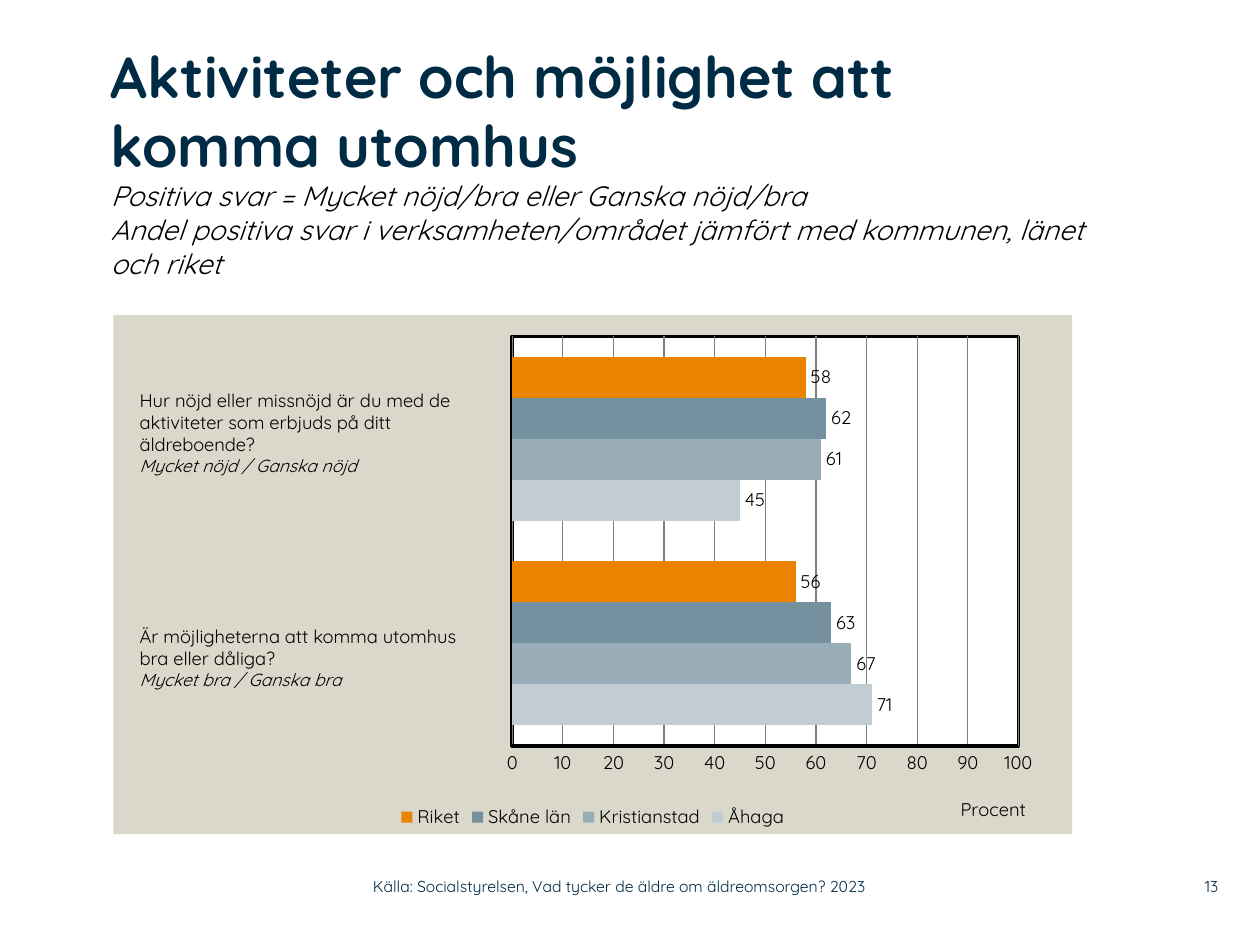
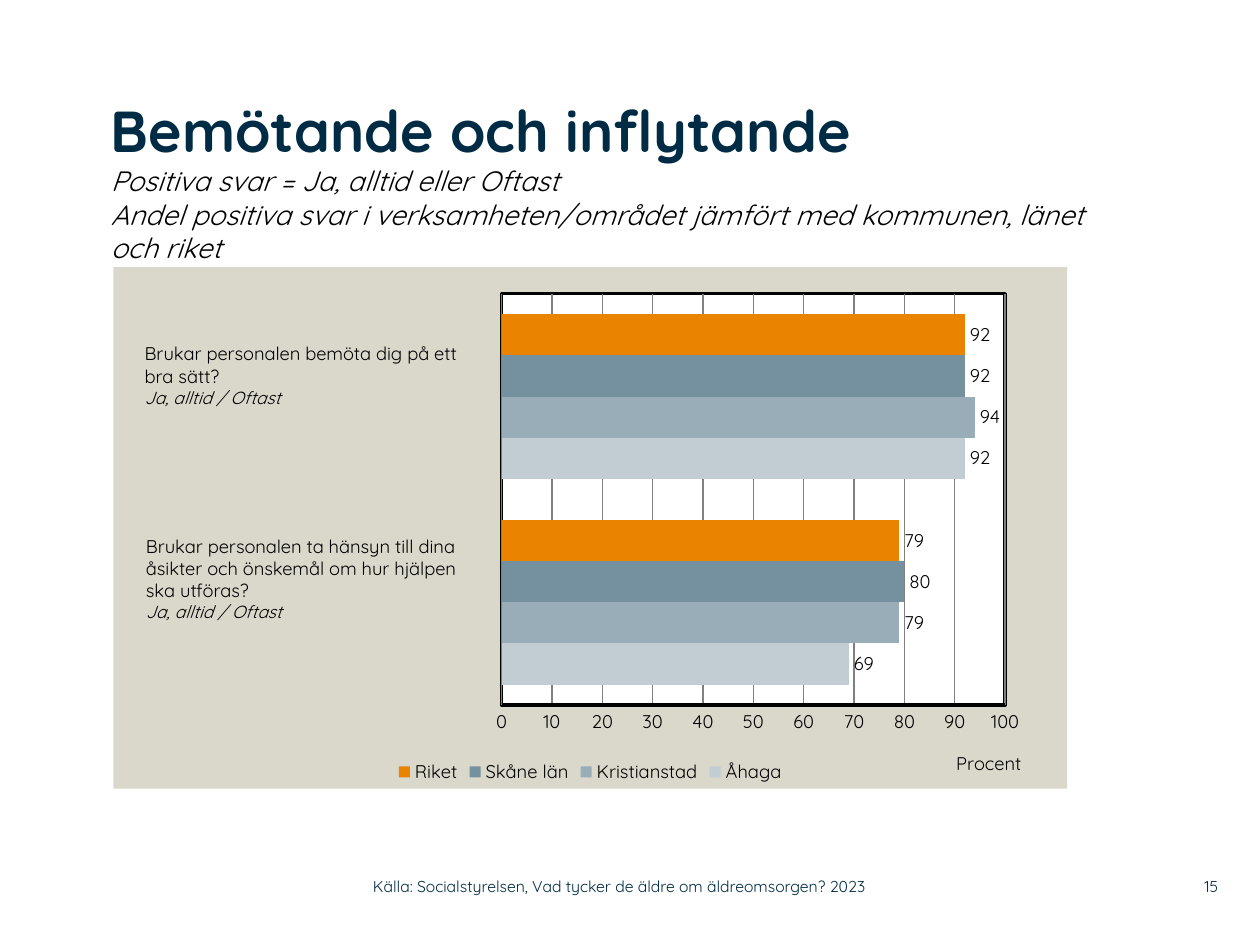
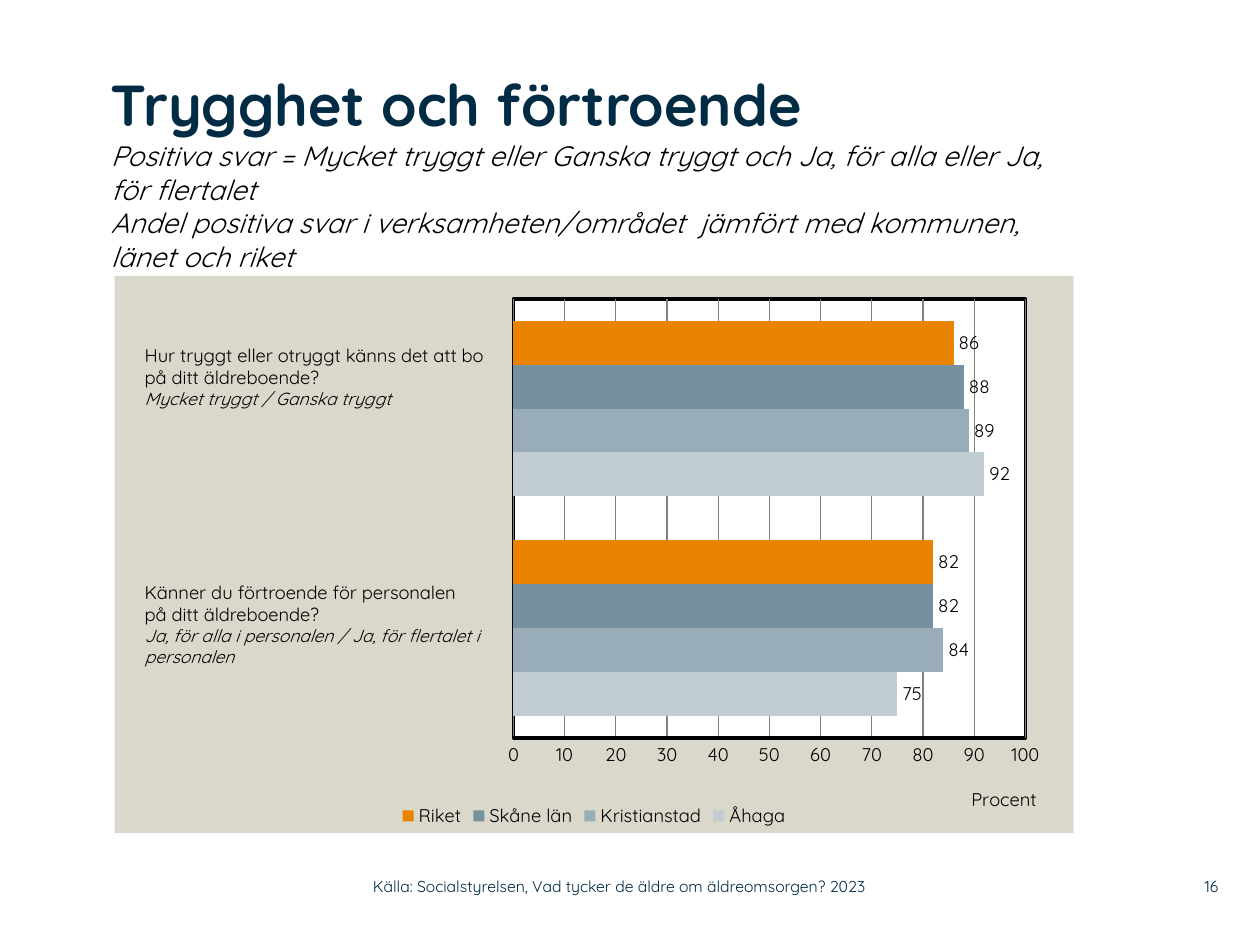
from dataclasses import dataclass

from lxml import etree
from pptx import Presentation
from pptx.chart.data import CategoryChartData as ChartData
from pptx.dml.color import RGBColor as RGB
from pptx.enum.chart import XL_CHART_TYPE as Kind
from pptx.enum.chart import XL_LABEL_POSITION as LabelPos
from pptx.enum.chart import XL_LEGEND_POSITION as LegendPos
from pptx.enum.chart import XL_TICK_MARK as Tick
from pptx.enum.text import MSO_ANCHOR as Anchor
from pptx.enum.text import MSO_AUTO_SIZE as Fit
from pptx.enum.text import PP_ALIGN as Align
from pptx.oxml.ns import qn
from pptx.util import Pt

PX = 9144  # EMU per px, 100 px to the inch
SOURCE = "Källa: Socialstyrelsen, Vad tycker de äldre om äldreomsorgen? 2023"
SHARE = "Andel positiva svar i verksamheten/området jämfört med kommunen, länet och riket"


@dataclass(frozen=True)
class Theme:
    face: str = "Quicksand"
    navy: str = "002B45"
    black: str = "000000"
    white: str = "FFFFFF"
    sand: str = "DAD7CB"
    grid: str = "808080"
    bars: tuple = ("C2CDD3", "99ADB9", "75909F", "E98300")
    names: tuple = ("Åhaga", "Kristianstad", "Skåne län", "Riket")
    head: float = 33
    sub: float = 16
    body: float = 10.5
    hint: float = 10
    foot: float = 9


def panel(fill, line=None, width=2):
    """Make a chart spPr with a solid fill and an optional border."""
    part = etree.Element(qn("c:spPr"))
    edge = etree.Element(qn("a:ln"), w=str(Pt(width)))
    for box, color in ((part, fill), (edge, line)):
        if color:
            solid = etree.SubElement(box, qn("a:solidFill"))
            etree.SubElement(solid, qn("a:srgbClr"), val=color)
        else:
            etree.SubElement(box, qn("a:noFill"))
    part.append(edge)
    return part


def place(node, index, inner=False, **spots):
    """Give a chart part a manual layout, in shares of the chart."""
    for old in node.findall(qn("c:layout")):
        node.remove(old)
    layout = etree.Element(qn("c:layout"))
    manual = etree.SubElement(layout, qn("c:manualLayout"))
    pairs = [("layoutTarget", "inner")] if inner else []
    pairs += [("xMode", "edge"), ("yMode", "edge"), *spots.items()]
    for tag, val in pairs:
        etree.SubElement(manual, qn("c:" + tag), val=str(val))
    node.insert(index, layout)


class Deck:
    def __init__(self, theme):
        self.theme = theme
        self.prs = Presentation()
        self.prs.slide_width, self.prs.slide_height = 1000 * PX, 750 * PX
        self.slide = None

    def page(self, number):
        self.slide = self.prs.slides.add_slide(self.prs.slide_layouts[6])
        look = dict(size=self.theme.foot, color=self.theme.navy)
        flat = dict(pad=0, vertical_anchor=Anchor.MIDDLE)
        self.text((920, 689, 47, 29), [(str(number), look)], Align.RIGHT, **flat)
        self.text((296, 689, 443, 29), [(SOURCE, look)], **flat)

    def style(self, font, size, color=None, **form):
        form = dict(name=self.theme.face, size=Pt(size), bold=False, italic=False) | form
        for key, val in form.items():
            setattr(font, key, val)
        font.color.rgb = RGB.from_string(color or self.theme.black)

    def text(self, box, lines, align=Align.LEFT, pad=None, **form):
        frame = self.slide.shapes.add_textbox(*(n * PX for n in box)).text_frame
        form = dict(word_wrap=True, auto_size=Fit.NONE) | form
        if pad is not None:
            form |= {"margin_" + side: pad * PX for side in ("left", "top", "right", "bottom")}
        for key, val in form.items():
            setattr(frame, key, val)
        for i, (words, look) in enumerate(lines):
            para = frame.add_paragraph() if i else frame.paragraphs[0]
            para.alignment = align
            run = para.add_run()
            run.text = words
            self.style(run.font, **look)

    def title(self, box, head, *subs):
        t = self.theme
        lines = [(head, dict(size=t.head, color=t.navy, bold=True))]
        lines += [(sub, dict(size=t.sub, italic=True)) for sub in subs]
        self.text(box, lines, pad=0)

    def ask(self, box, *lines):
        """Write a question, with its positive answers last."""
        t = self.theme
        *asked, hint = lines
        rows = [(line, dict(size=t.body)) for line in asked]
        rows.append((hint, dict(size=t.hint, italic=True)))
        self.text(box, rows, auto_size=Fit.SHAPE_TO_FIT_TEXT)

    def chart(self, box, plot, unit, rows):
        t = self.theme
        data = ChartData()
        data.categories = ["1", "2"]
        for name, row in zip(t.names, rows):
            data.add_series(name, row)
        chart = self.slide.shapes.add_chart(
            Kind.BAR_CLUSTERED, *(n * PX for n in box), data).chart
        self.style(chart.font, t.body)
        chart.has_title = False
        chart.has_legend = True
        chart.legend.position = LegendPos.BOTTOM
        chart.legend.include_in_layout = False
        self.style(chart.legend.font, t.body)
        self.axes(chart, unit)
        self.bars(chart.plots[0])
        root = chart.element.find(qn("c:chart"))
        area = root.find(qn("c:plotArea"))
        place(area, 0, True, **dict(zip("xywh", plot)))
        area.append(panel(t.white, t.black))
        root.addnext(panel(t.sand))

    def axes(self, chart, unit):
        t = self.theme
        chart.category_axis.visible = False
        axis = chart.value_axis
        form = dict(minimum_scale=0, maximum_scale=100, major_unit=10,
                    major_tick_mark=Tick.NONE, minor_tick_mark=Tick.NONE,
                    has_major_gridlines=True)
        for key, val in form.items():
            setattr(axis, key, val)
        self.style(axis.tick_labels.font, t.body)
        rules = ((axis.format.line, t.black, 2),
                 (axis.major_gridlines.format.line, t.grid, 0.75))
        for line, color, width in rules:
            line.color.rgb = RGB.from_string(color)
            line.width = Pt(width)
        title = axis.axis_title
        run = title.text_frame.paragraphs[0].add_run()
        run.text = "Procent"
        self.style(run.font, t.body)
        place(title._element, 1, **dict(zip("xy", unit)))

    def bars(self, plot):
        plot.gap_width, plot.overlap, plot.vary_by_categories = 100, 0, False
        plot.has_data_labels = True
        labels = plot.data_labels
        labels.show_value = True
        labels.position = LabelPos.OUTSIDE_END
        self.style(labels.font, self.theme.body)
        for bar, color in zip(plot.series, self.theme.bars):
            bar.format.fill.solid()
            bar.format.fill.fore_color.rgb = RGB.from_string(color)


PAGES = (
    dict(
        number=13,
        chart=((90, 250, 761, 412), (0.416, 0.041, 0.528, 0.789), (0.88, 0.92),
               ((71, 45), (67, 61), (63, 62), (56, 58))),
        title=((88, 32, 780, 189), "Aktiviteter och möjlighet att komma utomhus",
               "Positiva svar = Mycket nöjd/bra eller Ganska nöjd/bra", SHARE),
        asks=(((101, 304, 300, 98),
               "Hur nöjd eller missnöjd är du med de aktiviteter som erbjuds på ditt äldreboende?",
               "Mycket nöjd / Ganska nöjd"),
              ((101, 491, 301, 81), "Är möjligheterna att komma utomhus",
               "bra eller dåliga?", "Mycket bra / Ganska bra")),
    ),
    dict(
        number=15,
        chart=((90, 212, 757, 414), (0.407, 0.051, 0.528, 0.789), (0.88, 0.92),
               ((69, 92), (79, 94), (80, 92), (79, 92))),
        title=((88, 75, 804, 120), "Bemötande och inflytande",
               "Positiva svar = Ja, alltid eller Oftast", SHARE),
        asks=(((105, 267, 297, 81), "Brukar personalen bemöta dig på ett",
               "bra sätt?", "Ja, alltid / Oftast"),
              ((106, 420, 301, 98), "Brukar personalen ta hänsyn till dina",
               "åsikter och önskemål om hur hjälpen", "ska utföras?",
               "Ja, alltid / Oftast")),
    ),
    dict(
        number=16,
        chart=((91, 219, 761, 442), (0.416, 0.041, 0.534, 0.789), (0.89, 0.91),
               ((75, 92), (84, 89), (82, 88), (82, 86))),
        title=((88, 55, 775, 164), "Trygghet och förtroende",
               "Positiva svar = Mycket tryggt eller Ganska tryggt och Ja, för alla "
               "eller Ja, för flertalet",
               SHARE.replace("området ", "området  ")),
        asks=(((105, 268, 298, 81),
               "Hur tryggt eller otryggt känns det att bo på ditt äldreboende?",
               "Mycket tryggt / Ganska tryggt"),
              ((105, 456, 300, 98), "Känner du förtroende för personalen",
               "på ditt äldreboende?",
               "Ja, för alla i personalen / Ja, för flertalet i personalen")),
    ),
)


def main():
    deck = Deck(Theme())
    for page in PAGES:
        deck.page(page["number"])
        deck.chart(*page["chart"])
        deck.title(*page["title"])
        for ask in page["asks"]:
            deck.ask(*ask)
    deck.prs.save("out.pptx")


if __name__ == "__main__":
    main()
